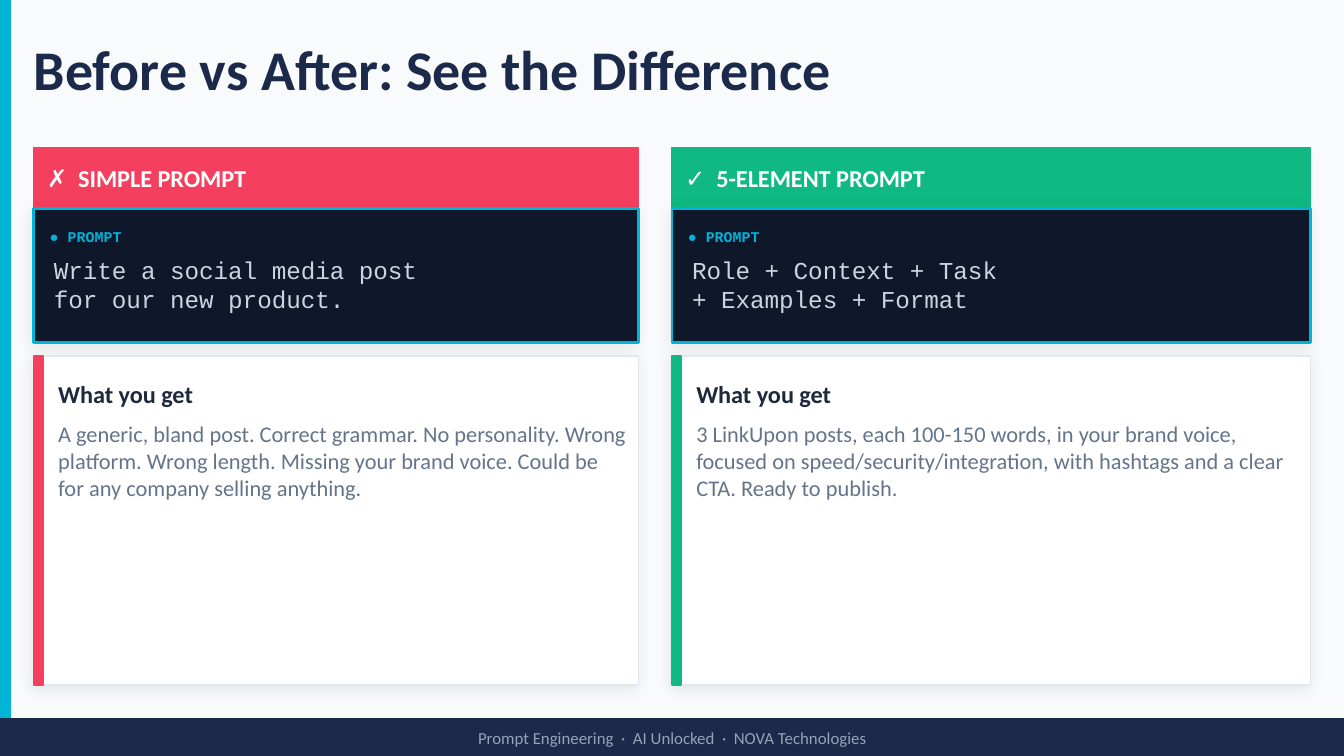
"""Build a slide comparing a simple prompt with a five-element prompt."""
from lxml import etree
from pptx import Presentation
from pptx.dml.color import RGBColor
from pptx.enum.shapes import MSO_SHAPE
from pptx.enum.text import MSO_ANCHOR, PP_ALIGN
from pptx.oxml import parse_xml
from pptx.oxml.ns import qn
from pptx.util import Cm, Pt

RECTANGLE = MSO_SHAPE.RECTANGLE
TOP, MIDDLE = MSO_ANCHOR.TOP, MSO_ANCHOR.MIDDLE
LEFT, CENTER = PP_ALIGN.LEFT, PP_ALIGN.CENTER

PAPER = RGBColor(0xF8, 0xFA, 0xFC)
WHITE = RGBColor(0xFF, 0xFF, 0xFF)
NAVY = RGBColor(0x1B, 0x2A, 0x4A)
CYAN = RGBColor(0x00, 0xB4, 0xD8)
RED = RGBColor(0xF4, 0x3F, 0x5E)
GREEN = RGBColor(0x10, 0xB9, 0x81)
INK = RGBColor(0x0F, 0x17, 0x2A)
BORDER = RGBColor(0xE2, 0xE8, 0xF0)
CODE = RGBColor(0xCB, 0xD5, 0xE1)
HEADING = RGBColor(0x1E, 0x29, 0x3B)
BODY = RGBColor(0x64, 0x74, 0x8B)
MUTED = RGBColor(0x94, 0xA3, 0xB8)

SANS, MONO = "Calibri", "Courier New"
SHADOW = (
    '<a:outerShdw xmlns:a="http://schemas.openxmlformats.org/drawingml/2006/main" '
    'blurRad="101600" dist="25400" dir="8100000" algn="bl" rotWithShape="0">'
    '<a:srgbClr val="000000"><a:alpha val="8000"/></a:srgbClr></a:outerShdw>'
)

deck = Presentation()
deck.slide_width, deck.slide_height = Cm(25.4), Cm(14.29)
page = deck.slides.add_slide(deck.slide_layouts[6])
page.background.fill.solid()
page.background.fill.fore_color.rgb = PAPER


def add_panel(left, top, width, height, fill, line=None, weight=1, shadow=False):
    panel = page.shapes.add_shape(RECTANGLE, Cm(left), Cm(top), Cm(width), Cm(height))
    panel.fill.solid()
    panel.fill.fore_color.rgb = fill
    panel.line.color.rgb = line or fill
    panel.line.width = Pt(weight)
    panel.shadow.inherit = False
    if shadow:
        effects = next(panel.element.iter(qn("a:effectLst")))
        etree.ElementBase.append(effects, parse_xml(SHADOW))


def add_text(left, top, width, height, lines, size, color, font=SANS,
             bold=False, anchor=MIDDLE, align=LEFT):
    box = page.shapes.add_textbox(Cm(left), Cm(top), Cm(width), Cm(height))
    frame = box.text_frame
    frame.word_wrap = True
    frame.vertical_anchor = anchor
    frame.margin_left = frame.margin_right = 0
    frame.margin_top = frame.margin_bottom = 0
    for index, line in enumerate(lines):
        para = frame.add_paragraph() if index else frame.paragraphs[0]
        para.alignment = align
        span = para.add_run()
        span.text = line
        span.font.name = font
        span.font.size = Pt(size)
        span.font.bold = bold
        span.font.color.rgb = color


add_panel(0, 0, 0.2, 13.59, CYAN)
add_text(0.64, 0.3, 24.13, 1.98, ["Before vs After: See the Difference"], 30, NAVY, bold=True)

columns = [
    (0.64, 11.43, RED, "✗  SIMPLE PROMPT",
     ["Write a social media post", "for our new product."],
     "A generic, bland post. Correct grammar. No personality. Wrong platform. "
     "Wrong length. Missing your brand voice. Could be for any company selling anything."),
    (12.7, 12.07, GREEN, "✓  5-ELEMENT PROMPT",
     ["Role + Context + Task", "+ Examples + Format"],
     "3 LinkUpon posts, each 100-150 words, in your brand voice, focused on "
     "speed/security/integration, with hashtags and a clear CTA. Ready to publish."),
]
for left, width, accent, label, prompt, result in columns:
    add_panel(left, 2.79, width, 1.14, accent)
    add_text(left + 0.25, 2.79, width - 0.5, 1.14, [label], 13, WHITE, bold=True)

    add_panel(left, 3.94, width, 2.54, INK, CYAN, 1.5, shadow=True)
    add_text(left + 0.3, 4.19, 5.08, 0.56, ["● PROMPT"], 8, CYAN, MONO, bold=True)
    add_text(left + 0.38, 4.83, width - 0.76, 1.4, prompt, 13, CODE, MONO, anchor=TOP)

    add_panel(left, 6.73, width, 6.22, WHITE, BORDER, shadow=True)
    add_panel(left, 6.73, 0.18, 6.22, accent)
    add_text(left + 0.46, 6.99, width - 0.64, 0.89, ["What you get"], 13, HEADING, bold=True)
    add_text(left + 0.46, 7.95, width - 0.64, 4.75, [result], 12, BODY, anchor=TOP)

add_panel(0, 13.59, 25.4, 0.7, NAVY)
add_text(0, 13.59, 25.4, 0.7, ["Prompt Engineering  ·  AI Unlocked  ·  NOVA Technologies"],
         9, MUTED, align=CENTER)

deck.save("out.pptx")
